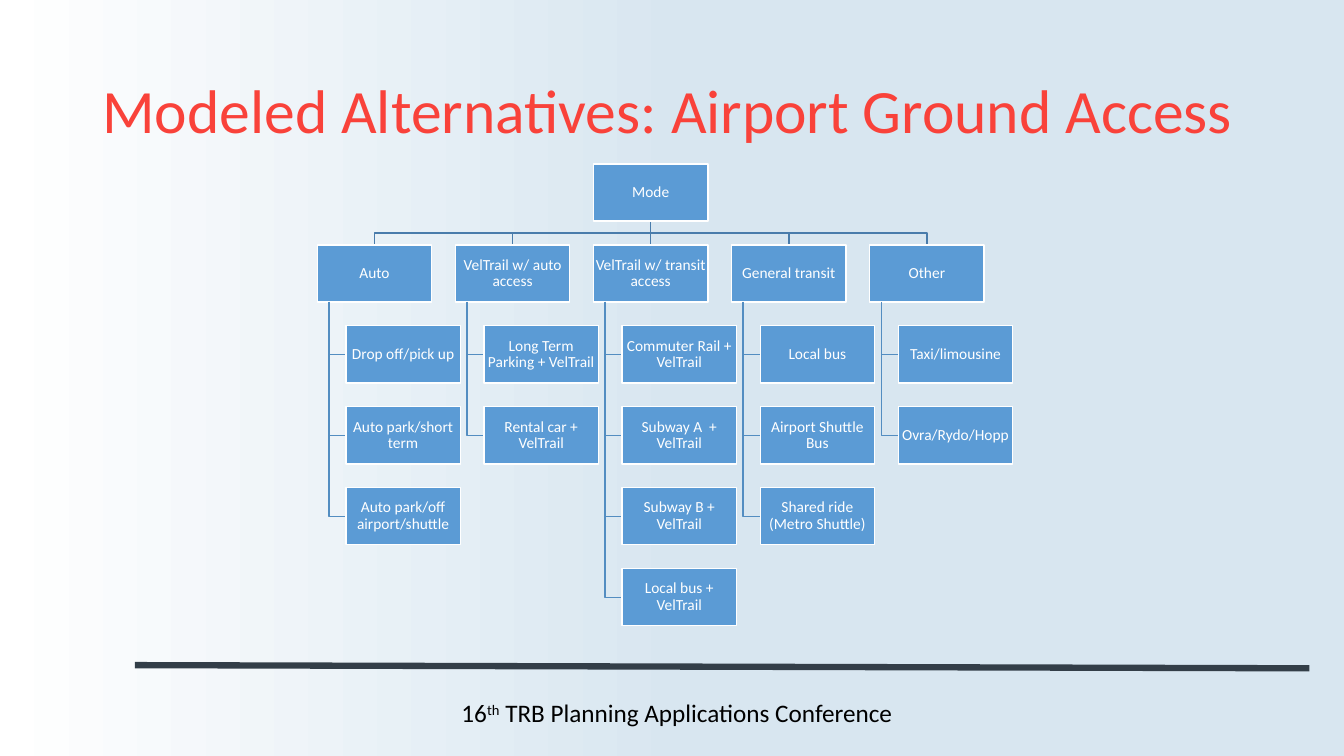
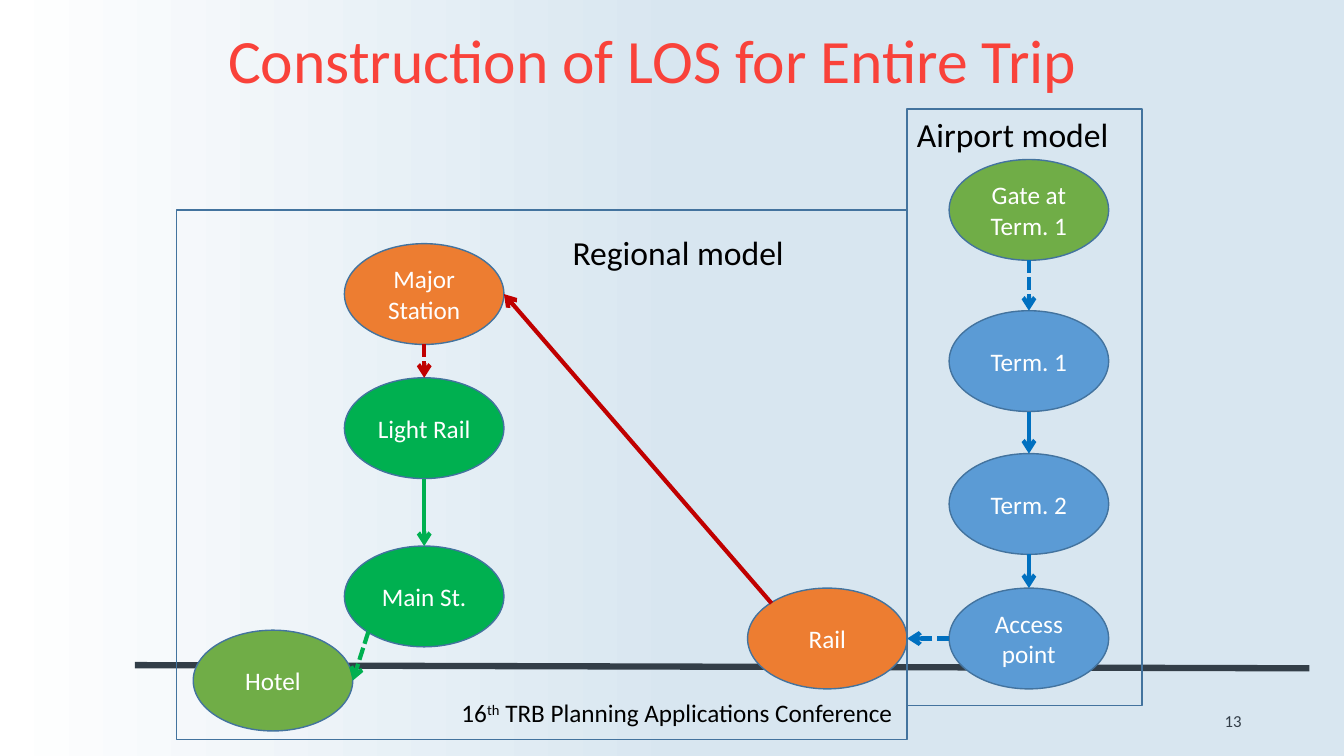
from dataclasses import dataclass

from lxml.etree import SubElement as Sub
from pptx import Presentation
from pptx.dml.color import RGBColor as Rgb
from pptx.enum.dml import MSO_LINE as Dash
from pptx.enum.shapes import MSO_CONNECTOR as Conn, MSO_SHAPE as Geo
from pptx.enum.text import MSO_ANCHOR as Anchor, PP_ALIGN as Align
from pptx.oxml.ns import qn
from pptx.util import Cm, Pt


@dataclass(frozen=True)
class Theme:
    face: str = "Calibri"
    # Type sizes
    head: int = 44
    label: int = 24
    body: int = 18
    page: int = 12
    small: int = 11
    # Colours
    white: str = "FFFFFF"
    black: str = "000000"
    pale: str = "D8E6F0"
    slate: str = "333E48"
    red: str = "F9423A"
    blue: str = "5B9BD5"
    edge: str = "43739E"
    trunk: str = "497CAB"
    twig: str = "538DC1"
    orange: str = "ED7D31"
    green: str = "00B050"
    leaf: str = "70AD47"
    sea: str = "0070C0"
    wine: str = "C00000"


T = Theme()

# Tree grid, in cm
BOX_W, BOX_H = 2.88, 1.44
COL, ROW = 3.48, 2.04
LEFT, TOP = 8, 4.13
INDENT, STEM = 0.72, 0.29

TREE = [
    ("Auto", ["Drop off/pick up", "Auto park/short term",
              "Auto park/off airport/shuttle"]),
    ("VelTrail w/ auto access", ["Long Term Parking + VelTrail",
                                 "Rental car + VelTrail"]),
    ("VelTrail w/ transit access", ["Commuter Rail + VelTrail",
                                    "Subway A  + VelTrail",
                                    "Subway B + VelTrail",
                                    "Local bus + VelTrail"]),
    ("General transit", ["Local bus", "Airport Shuttle Bus",
                         "Shared ride (Metro Shuttle)"]),
    ("Other", ["Taxi/limousine", "Ovra/Rydo/Hopp"]),
]

# Trip stops: text, left, top, fill
OVAL_W, OVAL_H = 4.02, 2.54
AIR_X, TOWN_X = 23.92, 8.68
STOPS = {
    "gate": ("Gate at Term. 1", AIR_X, 4.02, T.leaf),
    "term1": ("Term. 1", AIR_X, 7.83, T.blue),
    "term2": ("Term. 2", AIR_X, 11.43, T.blue),
    "access": ("Access point", AIR_X, 14.82, T.blue),
    "rail": ("Rail", 18.84, 14.82, T.orange),
    "major": ("Major Station", TOWN_X, 6.14, T.orange),
    "light": ("Light Rail", TOWN_X, 9.52, T.green),
    "main": ("Main St.", TOWN_X, 13.76, T.green),
    "hotel": ("Hotel", 4.87, 15.88, T.leaf),
}

# Points on an oval, as parts of its width and height
SITES = {"top": (0.5, 0), "base": (0.5, 1), "left": (0, 0.5),
         "right": (1, 0.5), "upper": (0.15, 0.15), "lower": (0.15, 0.85)}

# Trip legs: start, its site, end, its site, colour, dashed
LEGS = [
    ("gate", "base", "term1", "top", T.sea, True),
    ("term1", "base", "term2", "top", T.sea, False),
    ("term2", "base", "access", "top", T.sea, False),
    ("access", "left", "rail", "right", T.sea, True),
    ("rail", "upper", "major", "right", T.wine, False),
    ("major", "base", "light", "top", T.wine, True),
    ("light", "base", "main", "top", T.green, False),
    ("main", "lower", "hotel", "right", T.green, True),
]


def tint(hue):
    return Rgb.from_string(hue)


def apply(item, form):
    for key, val in form.items():
        setattr(item, key, val)


def write(frame, parts, size, hue, para=None, **form):
    """Put runs in a text frame; a run is (text, raised)."""
    apply(frame, {"word_wrap": True, "vertical_anchor": Anchor.MIDDLE, **form})
    line = frame.paragraphs[0]
    apply(line, para or {})
    for text, raised in parts:
        run = line.add_run()
        run.text = text
        apply(run.font, {"name": T.face, "size": Pt(size)})
        run.font.color.rgb = tint(hue)
        if raised:
            run._r.get_or_add_rPr().set("baseline", "30000")


def label(slide, place, parts, size, hue, para=None, **form):
    box = slide.shapes.add_textbox(*map(Cm, place))
    write(box.text_frame, parts, size, hue, para, **form)


def stroke(item, hue, width=1):
    item.line.color.rgb = tint(hue)
    item.line.width = Pt(width)


def block(slide, geo, place, edge, fill=None):
    item = slide.shapes.add_shape(geo, *map(Cm, place))
    item.shadow.inherit = False
    if fill:
        item.fill.solid()
        item.fill.fore_color.rgb = tint(fill)
    else:
        item.fill.background()
    stroke(item, edge)
    return item


def link(slide, start, end, hue, width=1, dashed=False, arrow=False):
    ends = map(Cm, (*start, *end))
    item = slide.shapes.add_connector(Conn.STRAIGHT, *ends)
    stroke(item, hue, width)
    if dashed:
        item.line.dash_style = Dash.SQUARE_DOT
    props = item._element.spPr
    if arrow:
        Sub(props.find(qn("a:ln")), qn("a:tailEnd"), type="arrow")
    Sub(props, qn("a:effectLst"))


def bend(slide, points, hue):
    """Draw an open line with square corners."""
    first, *rest = [(Cm(x), Cm(y)) for x, y in points]
    pen = slide.shapes.build_freeform(*first)
    pen.add_line_segments(rest, close=False)
    item = pen.convert_to_shape()
    item.shadow.inherit = False
    item.fill.background()
    stroke(item, hue)


def node(slide, x, y, text):
    item = block(slide, Geo.RECTANGLE, (x, y, BOX_W, BOX_H), T.white, T.blue)
    sides = ("left", "right", "top", "bottom")
    write(item.text_frame, [(text, False)], T.small, T.white,
          {"alignment": Align.CENTER, "line_spacing": 0.9},
          **{f"margin_{side}": Cm(0.03) for side in sides})


def base(deck, title, place):
    """Add a slide with the shared backdrop, rule, footer and title."""
    slide = deck.slides.add_slide(deck.slide_layouts[6])
    back = slide.background.fill
    back.gradient()
    back.gradient_angle = 0
    for stop, spot, hue in zip(back.gradient_stops, (0, 0.51),
                               (T.white, T.pale)):
        stop.position = spot
        stop.color.rgb = tint(hue)
    link(slide, (3.4, 16.76), (33, 16.84), T.slate, 4.5)
    label(slide, (11.38, 17.45, 11.73, 1.02),
          [("16", False), ("th", True),
           (" TRB Planning Applications Conference", False)],
          T.body, T.black, word_wrap=False, vertical_anchor=Anchor.TOP)
    label(slide, place, [(title, False)], T.head, T.red,
          {"line_spacing": 0.9})
    return slide


def modes(deck):
    slide = base(deck, "Modeled Alternatives: Airport Ground Access",
                 (2.33, 1.02, 29.21, 3.68))
    root = LEFT + COL * (len(TREE) // 2)
    mid = root + BOX_W / 2
    foot, row = TOP + BOX_H, TOP + ROW
    bus = (foot + row) / 2
    for col, (name, kids) in enumerate(TREE):
        x = LEFT + col * COL
        peak = x + BOX_W / 2
        # Branch from the root
        if x == root:
            link(slide, (mid, foot), (mid, row), T.trunk)
        else:
            bend(slide, [(mid, foot), (mid, bus), (peak, bus), (peak, row)],
                 T.trunk)
        node(slide, x, row, name)
        # Choices below the branch
        for step, kid in enumerate(kids, 1):
            y = row + step * ROW
            half = y + BOX_H / 2
            bend(slide, [(x + STEM, row + BOX_H), (x + STEM, half),
                         (x + INDENT, half)], T.twig)
            node(slide, x + INDENT, y, kid)
    node(slide, root, TOP, "Mode")


def site(stop, side):
    _, x, y, _ = STOPS[stop]
    dx, dy = SITES[side]
    return x + dx * OVAL_W, y + dy * OVAL_H


def trip(deck):
    slide = base(deck, "Construction of LOS for Entire Trip",
                 (5.5, 0, 22.86, 3.18))
    label(slide, (23.92, 17.65, 7.62, 1.02), [("13", False)], T.page, T.slate,
          {"alignment": Align.RIGHT})
    # Stops
    for text, x, y, fill in STOPS.values():
        oval = block(slide, Geo.OVAL, (x, y, OVAL_W, OVAL_H), T.edge, fill)
        write(oval.text_frame, [(text, False)], T.body, T.white,
              {"alignment": Align.CENTER})
    # Legs
    for start, out, end, into, hue, dashed in LEGS:
        link(slide, site(start, out), site(end, into), hue, 3, dashed, True)
    # Model frames with their names
    for text, frame, place in [
        ("Airport model", (22.86, 2.75, 5.92, 15.03),
         (22.86, 2.75, 5.38, 1.27)),
        ("Regional model", (4.45, 5.29, 18.41, 13.34),
         (14.18, 5.72, 5.9, 1.27)),
    ]:
        block(slide, Geo.RECTANGLE, frame, T.edge)
        label(slide, place, [(text, False)], T.label, T.black,
              word_wrap=False, vertical_anchor=Anchor.TOP)


def main():
    deck = Presentation()
    apply(deck, {"slide_width": Cm(33.87), "slide_height": Cm(19.05)})
    modes(deck)
    trip(deck)
    deck.save("out.pptx")


if __name__ == "__main__":
    main()
